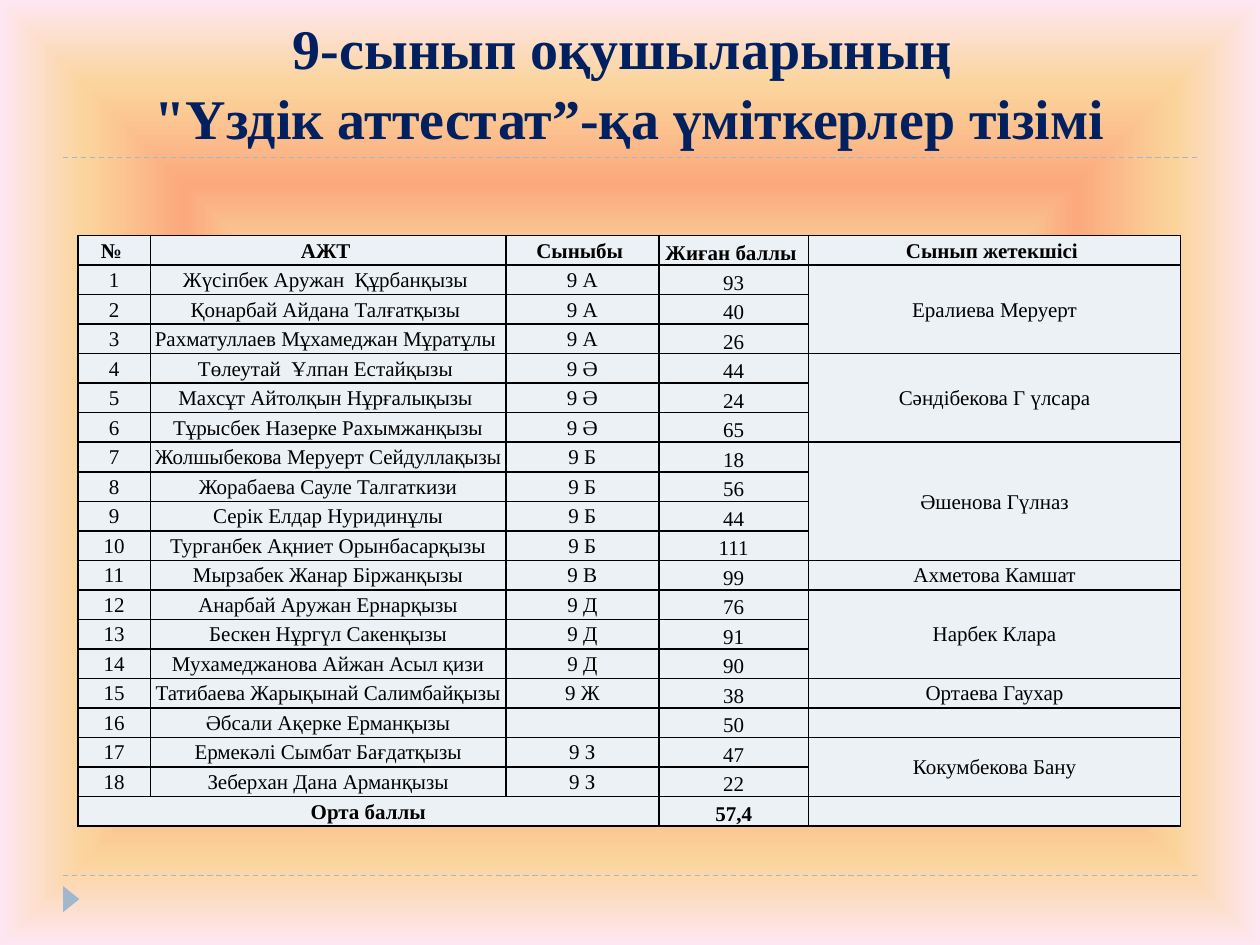
from dataclasses import dataclass

from lxml.etree import SubElement
from pptx import Presentation
from pptx.dml.color import RGBColor
from pptx.enum.dml import MSO_LINE
from pptx.enum.shapes import MSO_CONNECTOR, MSO_SHAPE
from pptx.enum.text import MSO_ANCHOR, MSO_AUTO_SIZE, PP_ALIGN
from pptx.oxml.ns import qn
from pptx.slide import Slide
from pptx.table import Table, _Cell
from pptx.util import Cm, Pt


@dataclass(frozen=True)
class Theme:
    font: str = "Times New Roman"
    title_size: float = 32
    table_size: float = 12
    rule_width: float = 0.75
    border_width: float = 1
    title: str = "002060"
    ink: str = "000000"
    accent: str = "9FB8CD"
    cell: str = "ECF1F5"
    glow: tuple = ((36, "FCE9AF"), (61, "FBA97D"), (82, "FBD49C"), (100, "FEE7F2"))


@dataclass(frozen=True)
class Pupil:
    name: str
    grade: str
    score: str


@dataclass(frozen=True)
class TeacherGroup:
    teacher: str
    pupils: tuple


THEME = Theme()
TITLE = "9-сынып оқушыларының \v\"Үздік аттестат”-қа үміткерлер тізімі"
HEADERS = ("№ ", "АЖТ ", "Сыныбы ", "Жиған баллы ", "Сынып жетекшісі ")
COLUMN_WIDTHS = (1.46, 7.17, 3.08, 3.02, 7.5)
TABLE_HEIGHT = 11.91
SCORE_COLUMN, TEACHER_COLUMN = 3, 4
GROUPS = (
    TeacherGroup("Ералиева Меруерт", (
        Pupil("Жүсіпбек Аружан  Құрбанқызы ", "9 А", "93"),
        Pupil("Қонарбай Айдана Талғатқызы ", "9 А", "40"),
        Pupil("Рахматуллаев Мұхамеджан Мұратұлы ", "9 А", "26"))),
    TeacherGroup("Сәндібекова Г үлсара", (
        Pupil("Төлеутай  Ұлпан Естайқызы ", "9 Ә", "44"),
        Pupil("Махсұт Айтолқын Нұрғалықызы ", "9 Ә", "24"),
        Pupil("Тұрысбек Назерке Рахымжанқызы", "9 Ә", "65"))),
    TeacherGroup("Әшенова Гүлназ", (
        Pupil("Жолшыбекова Меруерт Сейдуллақызы", "9 Б", "18"),
        Pupil("Жорабаева Сауле Талгаткизи", "9 Б", "56"),
        Pupil("Серік Елдар Нуридинұлы", "9 Б", "44"),
        Pupil("Турганбек Ақниет Орынбасарқызы", "9 Б", "111"))),
    TeacherGroup("Ахметова Камшат", (
        Pupil("Мырзабек Жанар Біржанқызы", "9 В", "99"),)),
    TeacherGroup("Нарбек Клара", (
        Pupil("Анарбай Аружан Ернарқызы", "9 Д", "76"),
        Pupil("Бескен Нұргүл Сакенқызы", "9 Д", "91"),
        Pupil("Мухамеджанова Айжан Асыл қизи", "9 Д", "90"))),
    TeacherGroup("Ортаева Гаухар", (
        Pupil("Татибаева Жарықынай Салимбайқызы", "9 Ж", "38"),)),
    TeacherGroup("", (
        Pupil("Әбсали Ақерке Ерманқызы", "", "50"),)),
    TeacherGroup("Кокумбекова Бану", (
        Pupil("Ермекәлі Сымбат Бағдатқызы", "9 З", "47"),
        Pupil("Зеберхан Дана Арманқызы", "9 З", "22"))),
)
TOTAL_ROW = ("Орта баллы", "", "", "57,4", "")


def set_attributes(target: object, values: dict) -> None:
    for name, value in values.items():
        setattr(target, name, value)


def add_color(parent, color: str) -> None:
    SubElement(parent, qn("a:srgbClr")).set("val", color)


def paint_background(slide: Slide) -> None:
    """Fill the background with a rectangular gradient growing from the centre."""
    slide.background.fill.solid()
    properties = slide.element.find(".//" + qn("p:bgPr"))
    properties.remove(properties[0])
    gradient = SubElement(properties, qn("a:gradFill"))
    properties.insert(0, gradient)
    stops = SubElement(gradient, qn("a:gsLst"))
    for percent, color in THEME.glow:
        stop = SubElement(stops, qn("a:gs"))
        stop.set("pos", str(percent * 1000))
        add_color(stop, color)
    shading = SubElement(gradient, qn("a:path"))
    shading.set("path", "shape")
    center = SubElement(shading, qn("a:fillToRect"))
    for side in "ltrb":
        center.set(side, "50000")


def add_rule(slide: Slide, top: float) -> None:
    rule = slide.shapes.add_connector(
        MSO_CONNECTOR.STRAIGHT, Cm(1.27), Cm(top), Cm(24.13), Cm(top))
    rule.line.color.rgb = RGBColor.from_string(THEME.accent)
    set_attributes(rule.line, {"width": Pt(THEME.rule_width), "dash_style": MSO_LINE.DASH})
    SubElement(rule.element.spPr, qn("a:effectLst"))


def add_marker(slide: Slide) -> None:
    marker = slide.shapes.add_shape(
        MSO_SHAPE.ISOSCELES_TRIANGLE, Cm(1.17), Cm(17.96), Cm(0.53), Cm(0.33))
    marker.rotation = 90
    marker.shadow.inherit = False
    marker.fill.solid()
    marker.fill.fore_color.rgb = RGBColor.from_string(THEME.accent)
    marker.line.fill.background()


def write_title(slide: Slide) -> None:
    title = slide.shapes.title
    set_attributes(title, {"left": Cm(1.27), "top": Cm(0.43),
                           "width": Cm(22.86), "height": Cm(2.74)})
    frame = title.text_frame
    frame.text = TITLE
    set_attributes(frame, {"word_wrap": True, "auto_size": MSO_AUTO_SIZE.NONE,
                           "vertical_anchor": MSO_ANCHOR.BOTTOM})
    paragraph = frame.paragraphs[0]
    set_attributes(paragraph, {"alignment": PP_ALIGN.CENTER, "line_spacing": 1.05})
    for run in paragraph.runs:
        set_attributes(run.font, {"name": THEME.font, "size": Pt(THEME.title_size), "bold": True})
        run.font.color.rgb = RGBColor.from_string(THEME.title)


def format_cell(cell: _Cell, text: str, bold: bool, anchor: MSO_ANCHOR) -> None:
    set_attributes(cell, {"vertical_anchor": anchor, "margin_left": Cm(0.03),
                          "margin_top": Cm(0.03), "margin_right": Cm(0.03),
                          "margin_bottom": Cm(0)})
    paragraph = cell.text_frame.paragraphs[0]
    paragraph.alignment = PP_ALIGN.CENTER
    if text:
        run = paragraph.add_run()
        run.text = text
        set_attributes(run.font, {"name": THEME.font, "size": Pt(THEME.table_size), "bold": bold})
        run.font.color.rgb = RGBColor.from_string(THEME.ink)
    else:
        ending = SubElement(paragraph._p, qn("a:endParaRPr"))
        ending.set("sz", str(THEME.table_size * 100))
    properties = cell._tc.get_or_add_tcPr()
    for side in ("a:lnL", "a:lnR", "a:lnT", "a:lnB"):
        border = SubElement(properties, qn(side))
        border.set("w", str(Pt(THEME.border_width)))
        add_color(SubElement(border, qn("a:solidFill")), THEME.ink)
    cell.fill.solid()
    cell.fill.fore_color.rgb = RGBColor.from_string(THEME.cell)


def table_rows() -> list[tuple]:
    """Number the pupils and name each teacher only in the group's first row."""
    rows = [HEADERS]
    for group in GROUPS:
        for index, pupil in enumerate(group.pupils):
            teacher = group.teacher if index == 0 else ""
            rows.append((str(len(rows)), pupil.name, pupil.grade, pupil.score, teacher))
    return rows + [TOTAL_ROW]


def merge_cells(table: Table, last_row: int) -> None:
    first = 1
    for group in GROUPS:
        last = first + len(group.pupils) - 1
        if last > first:
            table.cell(first, TEACHER_COLUMN).merge(table.cell(last, TEACHER_COLUMN))
        first = last + 1
    table.cell(last_row, 0).merge(table.cell(last_row, SCORE_COLUMN - 1))


def add_score_table(slide: Slide) -> None:
    rows = table_rows()
    table = slide.shapes.add_table(
        len(rows), len(HEADERS), Cm(1.57), Cm(4.75),
        Cm(sum(COLUMN_WIDTHS)), Cm(TABLE_HEIGHT)).table
    for column, width in zip(table.columns, COLUMN_WIDTHS):
        column.width = Cm(width)
    for row_index, values in enumerate(rows):
        bold = row_index in (0, len(rows) - 1)
        for column_index, text in enumerate(values):
            anchor = MSO_ANCHOR.BOTTOM if column_index == SCORE_COLUMN else MSO_ANCHOR.MIDDLE
            format_cell(table.cell(row_index, column_index), text, bold, anchor)
    merge_cells(table, len(rows) - 1)


def main() -> None:
    presentation = Presentation()
    set_attributes(presentation, {"slide_width": Cm(25.4), "slide_height": Cm(19.05)})
    slide = presentation.slides.add_slide(presentation.slide_layouts[5])
    paint_background(slide)
    for top in (17.65, 3.17):
        add_rule(slide, top)
    add_marker(slide)
    write_title(slide)
    add_score_table(slide)
    presentation.save("out.pptx")


if __name__ == "__main__":
    main()
